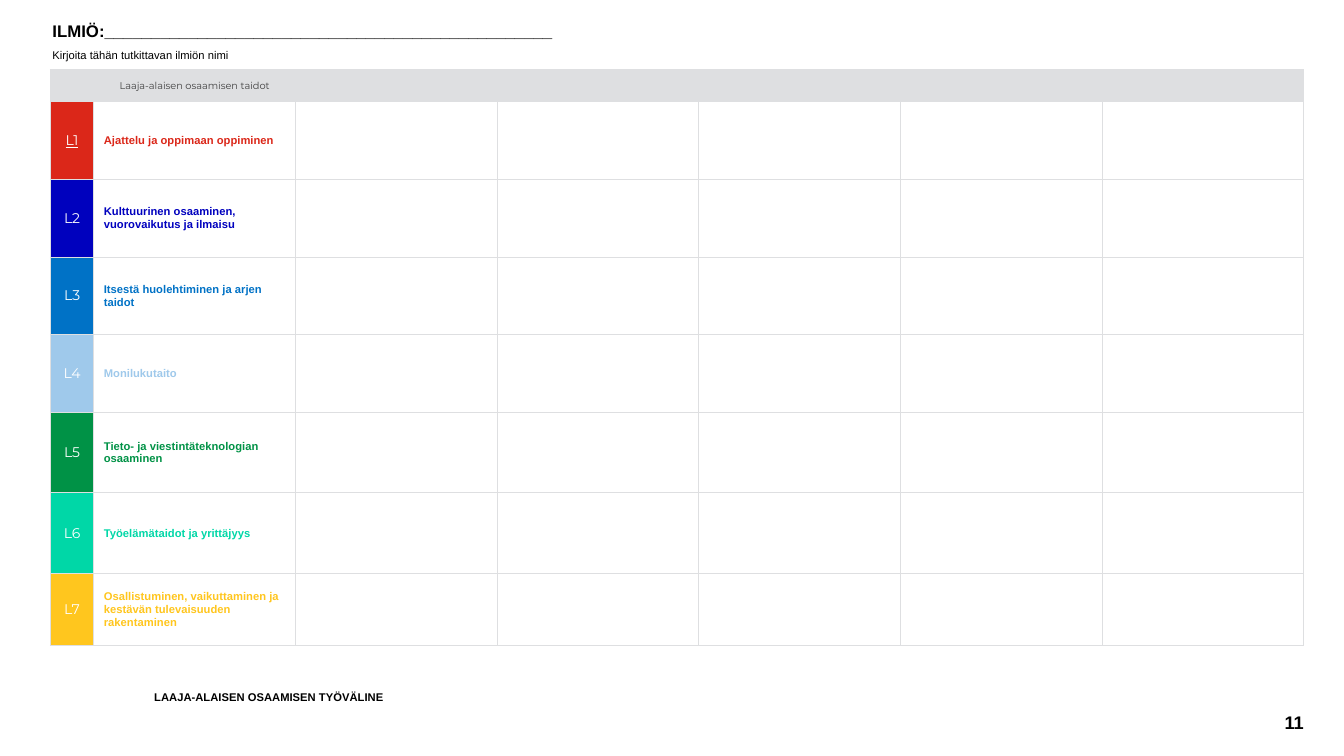
from lxml import etree
from pptx import Presentation
from pptx import util as u
from pptx.dml.color import RGBColor
from pptx.enum import text
from pptx.oxml.ns import qn

GRAY = "DEDFE1"
WHITE = "FFFFFF"
BLACK = "000000"
SKILLS = [
    ("Ajattelu ja oppimaan oppiminen", "DB2719", 0.77),
    ("Kulttuurinen osaaminen, vuorovaikutus ja ilmaisu", "0001BE", 0.77),
    ("Itsestä huolehtiminen ja arjen taidot", "0072C6", 0.77),
    ("Monilukutaito", "9FC9EB", 0.77),
    ("Tieto- ja viestintäteknologian osaaminen", "009246", 0.8),
    ("Työelämätaidot ja yrittäjyys", "00D7A7", 0.8),
    ("Osallistuminen, vaikuttaminen ja kestävän tulevaisuuden rakentaminen", "FFC61E", 0.72),
]
HEADER_HEIGHT = 0.32
COLUMN_WIDTHS = [0.43] + [2] * 6


def color(value):
    return RGBColor.from_string(value)


def format_paragraph(paragraph, size, value=BLACK, bold=False, font="Arial", align=text.PP_ALIGN.LEFT):
    paragraph.alignment = align
    for run in paragraph.runs:
        run.font.size = u.Pt(size)
        run.font.name = font
        run.font.bold = bold
        run.font.color.rgb = color(value)


def add_text(slide, box, lines, anchor=text.MSO_ANCHOR.TOP, inset=0.02, align=text.PP_ALIGN.LEFT, spacing=0.9):
    shape = slide.shapes.add_textbox(*[u.Inches(length) for length in box])
    frame = shape.text_frame
    frame.word_wrap = True
    frame.vertical_anchor = anchor
    frame.margin_left = u.Inches(inset)
    frame.margin_right = frame.margin_top = frame.margin_bottom = 0
    frame.text = "\n".join(line for line, size, bold in lines)
    for index, (paragraph, (line, size, bold)) in enumerate(zip(frame.paragraphs, lines)):
        format_paragraph(paragraph, size, bold=bold, align=align)
        paragraph.line_spacing = spacing
        if index:
            paragraph.space_before = u.Pt(6)


def style_cell(cell):
    cell.margin_left = cell.margin_right = cell.margin_top = cell.margin_bottom = u.Inches(0.1)
    properties = cell._tc.get_or_add_tcPr()
    for side in ("a:lnL", "a:lnR", "a:lnT", "a:lnB"):
        border = etree.SubElement(properties, qn(side), w=str(u.Pt(0.75)))
        fill = etree.SubElement(border, qn("a:solidFill"))
        etree.SubElement(fill, qn("a:srgbClr"), val=GRAY)
    cell.fill.background()
    paragraph = cell.text_frame.paragraphs[0]
    etree.SubElement(paragraph._p, qn("a:endParaRPr"), sz="700")


def fill_cell(cell, value):
    cell.fill.solid()
    cell.fill.fore_color.rgb = color(value)


def write_cell(cell, words, size, value, **style):
    cell.text_frame.text = words
    format_paragraph(cell.text_frame.paragraphs[0], size, value, **style)


def add_skill_table(slide, left, top):
    heights = [HEADER_HEIGHT] + [height for name, value, height in SKILLS]
    frame = slide.shapes.add_table(
        len(heights), len(COLUMN_WIDTHS), u.Inches(left), u.Inches(top),
        u.Inches(sum(COLUMN_WIDTHS)), u.Inches(sum(heights)))
    table = frame.table
    table.first_row = table.horz_banding = False
    for column, width in zip(table.columns, COLUMN_WIDTHS):
        column.width = u.Inches(width)
    for row, height in zip(table.rows, heights):
        row.height = u.Inches(height)
    for cell in table.iter_cells():
        style_cell(cell)
    for cell in table.rows[0].cells:
        fill_cell(cell, GRAY)
    centered = {"font": "Montserrat", "align": text.PP_ALIGN.CENTER}
    write_cell(table.cell(0, 1), "Laaja-alaisen osaamisen taidot", 7, "434343", **centered)
    for number, (name, value, height) in enumerate(SKILLS, 1):
        code, label = table.cell(number, 0), table.cell(number, 1)
        code.vertical_anchor = label.vertical_anchor = text.MSO_ANCHOR.MIDDLE
        fill_cell(code, value)
        write_cell(code, f"L{number}", 10, WHITE, **centered)
        write_cell(label, name, 8, value, bold=True)
    table.cell(1, 0).text_frame.paragraphs[0].runs[0].font.underline = True


def main():
    presentation = Presentation()
    presentation.slide_width = u.Inches(13.33)
    presentation.slide_height = u.Inches(7.5)
    slide = presentation.slides.add_slide(presentation.slide_layouts[6])
    add_skill_table(slide, 0.5, 0.69)
    add_text(slide, (0.5, 0.23, 6.12, 0.35), [
        ("ILMIÖ:" + "_" * 48, 12, True),
        ("Kirjoita tähän tutkittavan ilmiön nimi", 8, False),
    ])
    add_text(slide, (1.51, 6.86, 4.1, 0.22), [("LAAJA-ALAISEN OSAAMISEN TYÖVÄLINE", 8, True)])
    add_text(slide, (11.58, 7.02, 1.35, 0.28), [("11", 13, True)],
             anchor=text.MSO_ANCHOR.MIDDLE, inset=0, align=text.PP_ALIGN.RIGHT, spacing=1.0)
    presentation.save("out.pptx")


if __name__ == "__main__":
    main()
